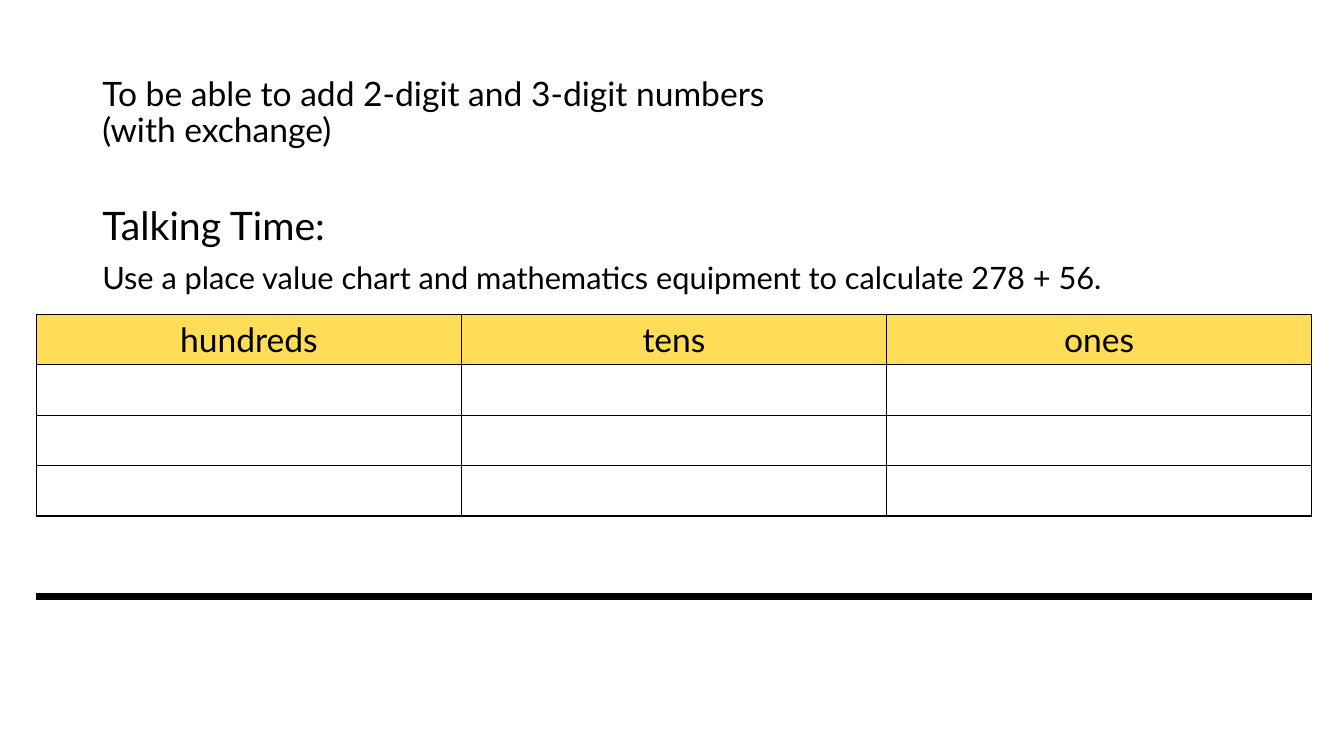
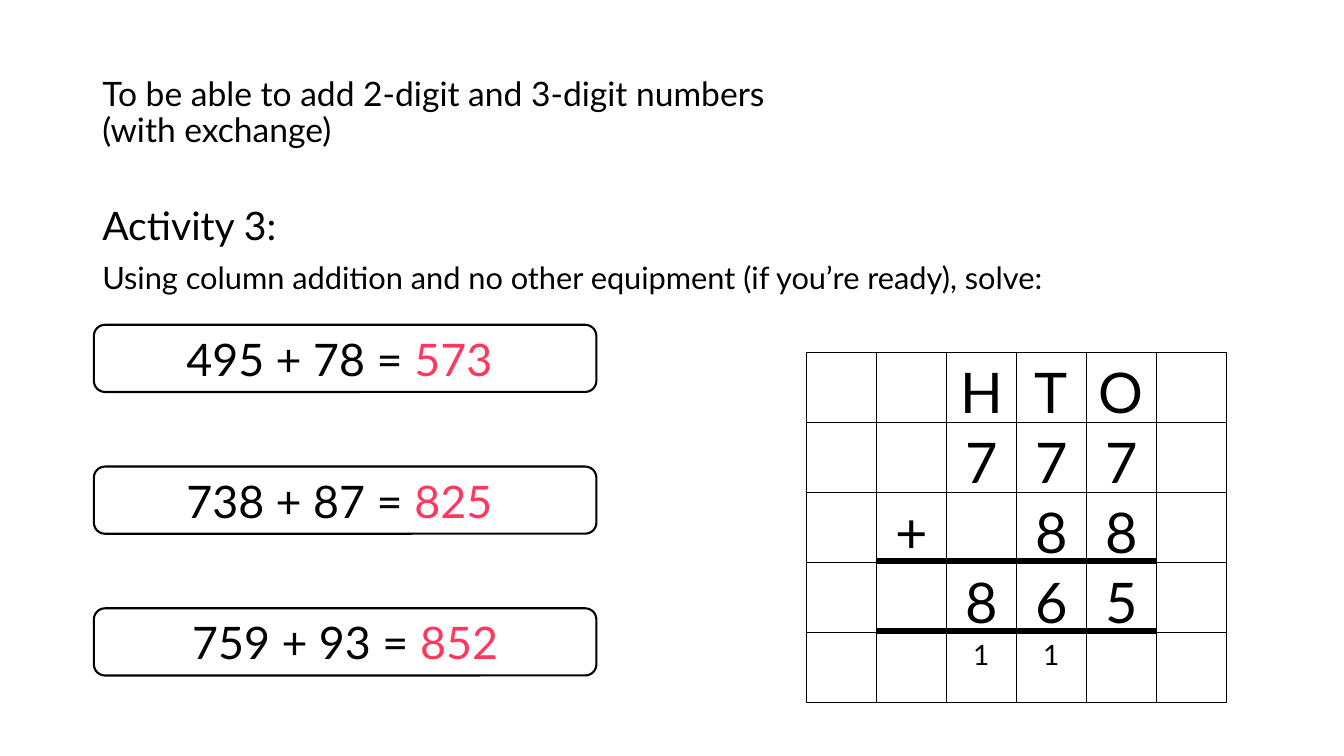
from dataclasses import dataclass

from lxml import etree
from pptx import Presentation
from pptx.dml.color import RGBColor
from pptx.enum.shapes import MSO_CONNECTOR, MSO_SHAPE
from pptx.enum.text import MSO_ANCHOR, PP_ALIGN
from pptx.oxml.ns import qn
from pptx.util import Pt

RECT, ROUND_RECT = MSO_SHAPE.RECTANGLE, MSO_SHAPE.ROUNDED_RECTANGLE
STRAIGHT = MSO_CONNECTOR.STRAIGHT
LEFT, CENTER = PP_ALIGN.LEFT, PP_ALIGN.CENTER
TOP, MIDDLE = MSO_ANCHOR.TOP, MSO_ANCHOR.MIDDLE


@dataclass(frozen=True)
class Theme:
    font: str = "Lato"
    ink: str = "000000"
    paper: str = "FFFFFF"
    header: str = "FFDD57"
    answer: str = "FF3860"
    title: int = 24
    heading: int = 28
    body: int = 22
    column: int = 24
    sum: int = 32
    digit: int = 40
    carry: int = 20
    thin: float = 1
    outline: float = 1.5
    rule: float = 4.5


T = Theme()
TITLE = ["To be able to add 2-digit and 3-digit numbers ", "(with exchange)"]
TITLE_BOX = (66, 29, 691, 104)
BODY_BOX = (66, 144, 828, 343)


def rgb(color):
    return RGBColor.from_string(color)


def write(p, text, size, color=T.ink, align=LEFT, spacing=None, before=None):
    p.alignment = align
    if spacing:
        p.line_spacing = spacing
    if before is not None:
        p.space_before = Pt(before)
    r = p.add_run()
    r.text = text
    r.font.name = T.font
    r.font.size = Pt(size)
    r.font.color.rgb = rgb(color)


def text_box(s, box, anchor):
    tf = s.shapes.add_textbox(*map(Pt, box)).text_frame
    tf.word_wrap = True
    tf.vertical_anchor = anchor
    return tf


def panel(s, kind, box, width, anchor):
    sp = s.shapes.add_shape(kind, *map(Pt, box))
    sp.shadow.inherit = False
    sp.fill.solid()
    sp.fill.fore_color.rgb = rgb(T.paper)
    sp.line.color.rgb = rgb(T.ink)
    sp.line.width = Pt(width)
    sp.text_frame.word_wrap = True
    sp.text_frame.vertical_anchor = anchor
    return sp.text_frame.paragraphs[0]


def rule(s, x, y, width):
    line = s.shapes.add_connector(STRAIGHT, Pt(x), Pt(y), Pt(x + width), Pt(y))
    line.line.color.rgb = rgb(T.ink)
    line.line.width = Pt(T.rule)
    etree.SubElement(line._element.spPr, qn("a:effectLst"))


def lesson_slide(prs, heading, task):
    s = prs.slides.add_slide(prs.slide_layouts[6])
    p = text_box(s, TITLE_BOX, MIDDLE).paragraphs[0]
    write(p, TITLE[0], T.title, spacing=0.9)
    p.add_line_break()
    write(p, TITLE[1], T.title)
    tf = text_box(s, BODY_BOX, TOP)
    write(tf.paragraphs[0], heading, T.heading, spacing=0.9)
    write(tf.add_paragraph(), task, T.body, spacing=0.9, before=10)
    return s


def style_cell(cell, fill):
    pr = cell._tc.get_or_add_tcPr()
    for side in ("lnL", "lnR", "lnT", "lnB"):
        ln = etree.SubElement(pr, qn("a:" + side), w=str(Pt(T.thin)))
        solid = etree.SubElement(ln, qn("a:solidFill"))
        etree.SubElement(solid, qn("a:srgbClr"), val=T.ink)
    cell.fill.solid()
    cell.fill.fore_color.rgb = rgb(fill)
    cell.vertical_anchor = MIDDLE


def place_value_chart(s, box, headers, rows):
    table = s.shapes.add_table(rows, len(headers), *map(Pt, box)).table
    for i in range(rows):
        for cell in table.rows[i].cells:
            style_cell(cell, T.paper if i else T.header)
    for cell, header in zip(table.rows[0].cells, headers):
        write(cell.text_frame.paragraphs[0], header, T.column, align=CENTER)


def answer_list(s, box, sums, height):
    x, y, width, total = box
    pitch = (total - height) / (len(sums) - 1)
    for i, (question, answer) in enumerate(sums):
        p = panel(s, ROUND_RECT, (x, y + i * pitch, width, height), T.outline, MIDDLE)
        write(p, question, T.sum, align=CENTER)
        write(p, answer, T.sum, color=T.answer, align=CENTER)


def column_addition(s, x, y, side, rows):
    last = len(rows) - 1
    for i, row in enumerate(rows):
        for j, mark in enumerate(row):
            p = panel(s, RECT, (x + j * side, y + i * side, side, side), T.thin, TOP)
            if mark != " ":
                write(p, mark, T.carry if i == last else T.digit, align=CENTER)
    for i in (last - 1, last):
        rule(s, x + side, y + i * side - 1.5, (len(rows[0]) - 2) * side)


def main():
    prs = Presentation()
    prs.slide_width, prs.slide_height = Pt(960), Pt(540)

    s = lesson_slide(prs, "Talking Time:",
                     "Use a place value chart and mathematics equipment to calculate 278 + 56.")
    place_value_chart(s, (26, 224.5, 911, 144), ["hundreds", "tens", "ones"], 4)
    rule(s, 26, 426, 911)

    s = lesson_slide(prs, "Activity 3:",
                     "Using column addition and no other equipment (if you’re ready), solve:")
    sums = [("495 + 78 = ", "573 "), ("738 + 87 = ", "825 "), ("759 + 93 = ", "852")]
    answer_list(s, (67, 232, 359, 250.5), sums, 48)
    column_addition(s, 576, 252, 50, ["  HTO ", "  777 ", " + 88 ", "  865 ", "  11  "])

    prs.save("out.pptx")


if __name__ == "__main__":
    main()
